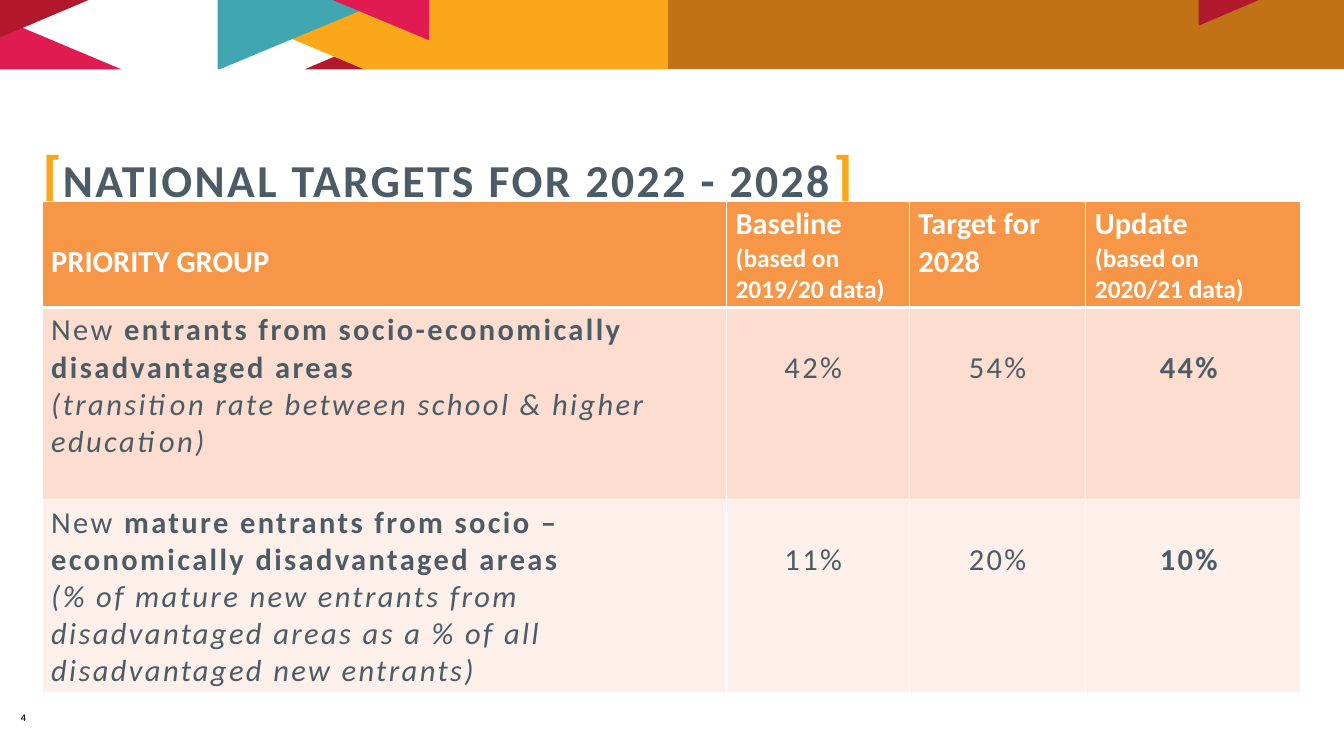
from lxml import etree
from pptx import Presentation
from pptx.dml.color import RGBColor
from pptx.enum.text import MSO_ANCHOR, MSO_AUTO_SIZE, PP_ALIGN
from pptx.oxml.ns import qn
from pptx.util import Pt

TOP, NO_FIT = MSO_ANCHOR.TOP, MSO_AUTO_SIZE.NONE
LEFT, CENTER = PP_ALIGN.LEFT, PP_ALIGN.CENTER

FONT = "Calibri"
WHITE, SLATE, AMBER = "FFFFFF", "4B5C66", "FAA819"
BRACKET, CRIMSON, PINK = "FAA61A", "B1182C", "DF1B51"
BAND = 54.7
WIDTH, HEIGHT = 1058.4, 595.4

BANNER = [
    (PINK, [(0, 14.4), (0, BAND), (95.8, BAND)]),
    (CRIMSON, [(263.5, 44.6), (239.8, BAND), (287.3, BAND)]),
    (AMBER, [(185.8, 0), (185.8, 12.2), (287.3, BAND), (526.3, BAND), (526.3, 0)]),
    ("40A6B0", [(303.8, 0), (171.4, 0), (171.4, BAND), (172.8, BAND)]),
    (PINK, [(337.7, 0), (262, 0), (337.7, 31.7)]),
    (CRIMSON, [(69.8, 0), (0, 0), (0, 29.5)]),
    ("C17214", [(526.3, 0), (526.3, BAND), (WIDTH, BAND), (WIDTH, 0)]),
    (CRIMSON, [(991.4, 0), (943.9, 0), (943.9, 20.2)]),
]

TITLE = [
    ("[", 84, BRACKET, 0.6, -3),
    ("NATIONAL TARGETS FOR 2022 - 2028", 36, SLATE, 1.9, 0),
    ("]", 84, BRACKET, 1.6, -3),
]

HEADERS = [
    [("PRIORITY GROUP", 24)],
    [("Baseline", 24), ("(based on 2019/20 data)", 20)],
    [("Target for 2028", 24)],
    [("Update", 24), ("(based on 2020/21 data)", 20)],
]
GROUPS = [
    (" entrants from socio-economically disadvantaged areas",
     "(transition rate between school & higher education)",
     ["42% ", "54%", "44% "]),
    (" mature entrants from socio – economically disadvantaged areas",
     "(% of mature new entrants from disadvantaged areas as a % of all disadvantaged new entrants)",
     ["11% ", "20%", "10% "]),
]
COLS = [539, 144, 139, 169.5]
ROWS = [83.5, 151.5, 151.5]
FILLS = ["F79646", "FCDDCF", "FDEFE9"]
PAD, LINE = 3.6, 29.3


def rgb(value):
    return RGBColor.from_string(value)


def add_run(p, text, size, color, bold=False, italic=False, spacing=0, shift=0):
    r = p.add_run()
    r.text = text
    f = r.font
    f.name, f.size, f.bold, f.italic = FONT, Pt(size), bold, italic
    f.color.rgb = rgb(color)
    props = r._r.get_or_add_rPr()
    if spacing:
        props.set("spc", str(round(spacing * 100)))
    if shift:
        props.set("baseline", str(shift * 1000))


def plain_frame(tf):
    tf.word_wrap = True
    tf.auto_size = NO_FIT
    tf.vertical_anchor = TOP
    tf.margin_left = tf.margin_right = tf.margin_top = tf.margin_bottom = 0
    return tf.paragraphs[0]


def add_outline(shapes, color, points):
    points = [(Pt(x), Pt(y)) for x, y in points]
    builder = shapes.build_freeform(*points[0], scale=1.0)
    builder.add_line_segments(points[1:], close=True)
    sp = builder.convert_to_shape()
    sp.shadow.inherit = False
    sp.fill.solid()
    sp.fill.fore_color.rgb = rgb(color)
    sp.line.fill.background()


def format_cell(cell, fill, bottom_width, skip_line):
    cell.fill.solid()
    cell.fill.fore_color.rgb = rgb(fill)
    cell.vertical_anchor = TOP
    cell.margin_top = Pt(PAD + LINE * skip_line)
    cell.margin_bottom = Pt(1)
    tc_pr = cell._tc.get_or_add_tcPr()
    for i, (side, width) in enumerate([("L", 1), ("R", 1), ("T", 1), ("B", bottom_width)]):
        ln = etree.Element(qn(f"a:ln{side}"), w=str(Pt(width)))
        solid = etree.SubElement(ln, qn("a:solidFill"))
        etree.SubElement(solid, qn("a:srgbClr"), val=WHITE)
        tc_pr.insert(i, ln)


def add_targets(shapes):
    frame = shapes.add_table(len(ROWS), len(COLS), Pt(33.1), Pt(158.6),
                             Pt(sum(COLS)), Pt(sum(ROWS)))
    table = frame.table
    for col, width in zip(table.columns, COLS):
        col.width = Pt(width)
    for row, height in zip(table.rows, ROWS):
        row.height = Pt(height)

    for c, lines in enumerate(HEADERS):
        cell = table.cell(0, c)
        format_cell(cell, FILLS[0], 3, c == 0)
        for i, (text, size) in enumerate(lines):
            tf = cell.text_frame
            p = tf.add_paragraph() if i else tf.paragraphs[0]
            add_run(p, text, size, WHITE, bold=True)

    for n, (group, measure, values) in enumerate(GROUPS, 1):
        cell = table.cell(n, 0)
        format_cell(cell, FILLS[n], 1, False)
        p = cell.text_frame.paragraphs[0]
        add_run(p, "New", 24, SLATE, spacing=1.9)
        add_run(p, group, 24, SLATE, bold=True, spacing=1.9)
        p = cell.text_frame.add_paragraph()
        add_run(p, measure, 24, SLATE, italic=True, spacing=1.9)
        for c, value in enumerate(values, 1):
            cell = table.cell(n, c)
            format_cell(cell, FILLS[n], 1, True)
            p = cell.text_frame.paragraphs[0]
            p.alignment = CENTER
            add_run(p, value, 24, SLATE, bold=c == len(values), spacing=1.9)


def main():
    prs = Presentation()
    prs.slide_width, prs.slide_height = Pt(WIDTH), Pt(HEIGHT)
    s = prs.slides.add_slide(prs.slide_layouts[5])

    for color, points in BANNER:
        add_outline(s.shapes, color, points)

    title = s.shapes.title
    title.left, title.top, title.width, title.height = Pt(33.1), Pt(71.5), Pt(661), Pt(69)
    p = plain_frame(title.text_frame)
    p.alignment = LEFT
    for text, size, color, spacing, shift in TITLE:
        add_run(p, text, size, color, bold=True, spacing=spacing, shift=shift)

    number = s.shapes.add_textbox(Pt(16.5), Pt(560), Pt(19.5), Pt(10))
    add_run(plain_frame(number.text_frame), "4", 8, "231F20", bold=True, spacing=0.1)

    add_targets(s.shapes)
    prs.save("out.pptx")


if __name__ == "__main__":
    main()
